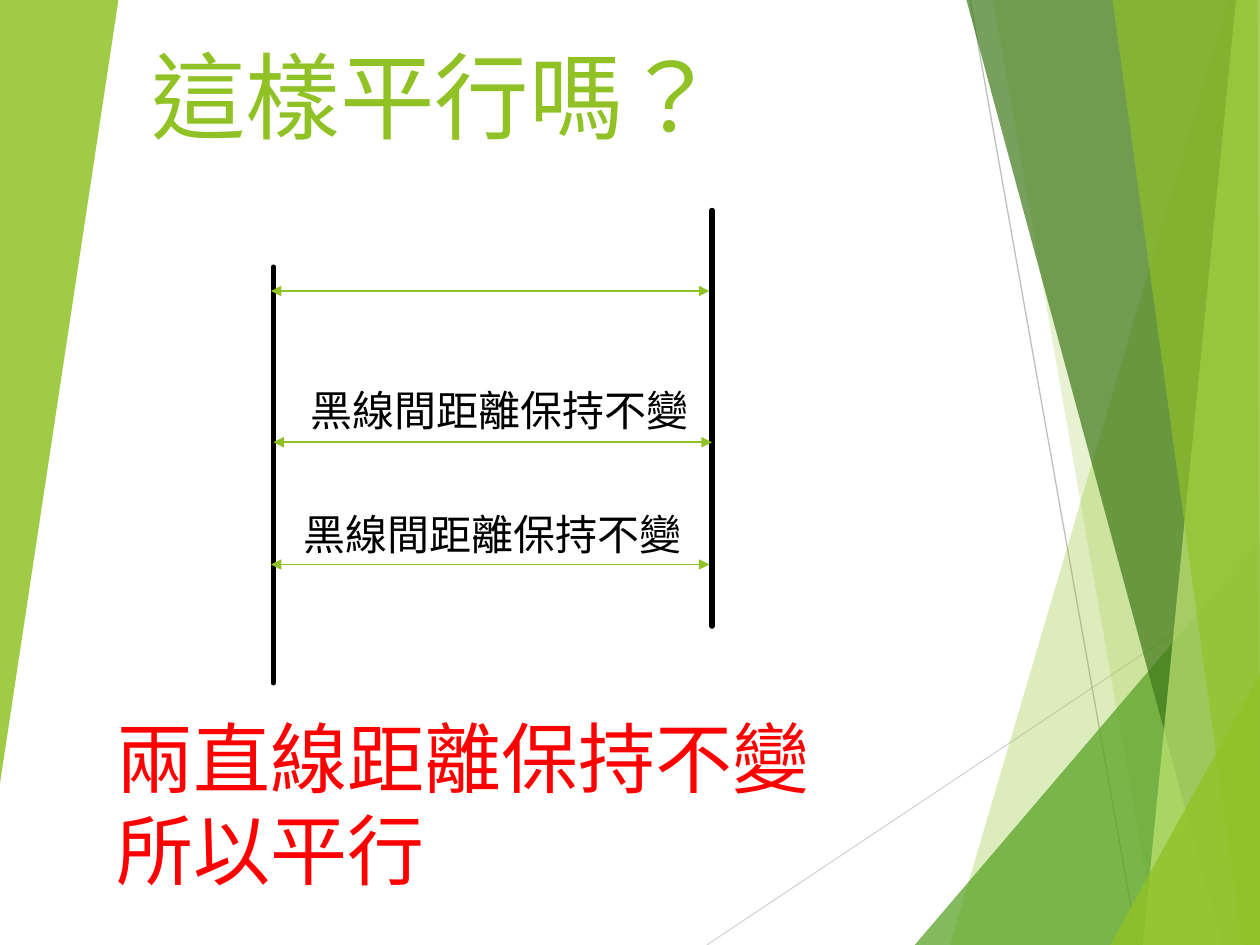
from lxml.etree import SubElement
from pptx import Presentation
from pptx.dml.color import RGBColor
from pptx.enum.shapes import MSO_CONNECTOR
from pptx.enum.text import MSO_ANCHOR, MSO_AUTO_SIZE, PP_ALIGN
from pptx.oxml.ns import qn
from pptx.util import Inches, Pt

COLUMNS, ROWS = 100, 75
LIME, GREEN, FOREST, PALE = "90C226", "54A021", "3F7819", "C0E474"
BLACK, RED = "000000", "FF0000"
SERIF, DISPLAY = "Times New Roman", "Karla"

GUIDES = [((56.1, 75), (100, 45.7), "D9D9D9"), ((77, 0), (90.3, 75), "BFBFBF")]
FACETS = [
    (LIME, 30, [(97.5, 0), (75.4, 75), (100, 75), (100, 0)]),
    (LIME, 20, [(78.8, 0), (91.9, 75), (100, 75), (100, 0)]),
    (GREEN, 72, [(72.6, 75), (100, 42.9), (100, 75)]),
    (FOREST, 70, [(76.7, 0), (97, 75), (100, 75), (100, 0)]),
    (PALE, 70, [(98.1, 0), (90.7, 75), (100, 75), (100, 0)]),
    (LIME, 65, [(88.3, 0), (98.6, 75), (100, 75), (99.8, 0)]),
    (LIME, 80, [(88.1, 75), (100, 53.5), (100, 75)]),
    (LIME, 85, [(0, 0), (9.4, 0), (0, 62.2)]),
]
RAILS = [(21.7, 21.2), (56.5, 16.7)]
RAIL_LENGTH, GAP = 33, 34.8
SPANS = [(21.5, 23.1), (21.7, 35.1), (21.5, 44.8)]
LABELS = [(23.7, 30), (23.1, 39.9)]


def color(value):
    """Turn a hex string into a colour."""
    return RGBColor.from_string(value)


class SlidePainter:
    """Holds the grid, the style and the current slide."""

    def __init__(self, deck):
        """Set the slide size and add a slide with a title."""
        deck.slide_width, deck.slide_height = Inches(10), Inches(7.5)
        self.column = deck.slide_width / COLUMNS
        self.row = deck.slide_height / ROWS
        self.page = deck.slides.add_slide(deck.slide_layouts[5])

    def point(self, column, row):
        """Convert a grid position to slide units."""
        return round(column * self.column), round(row * self.row)

    def line(self, start, end, shade, width, arrows=False, cap="flat"):
        """Draw a straight line, with arrowheads at both ends if asked."""
        connector = self.page.shapes.add_connector(
            MSO_CONNECTOR.STRAIGHT, *self.point(*start), *self.point(*end))
        connector.line.color.rgb = color(shade)
        connector.line.width = Pt(width)
        outline = connector._element.spPr.find(qn("a:ln"))
        outline.set("cap", cap)
        if arrows:
            for tag in ("a:headEnd", "a:tailEnd"):
                SubElement(outline, qn(tag), type="triangle")
        SubElement(connector._element.spPr, qn("a:effectLst"))

    def facet(self, shade, opacity, corners):
        """Draw a translucent polygon."""
        first, *others = [self.point(*corner) for corner in corners]
        builder = self.page.shapes.build_freeform(*first)
        builder.add_line_segments(others, close=True)
        shape = builder.convert_to_shape()
        shape.shadow.inherit = False
        shape.line.fill.background()
        shape.fill.solid()
        shape.fill.fore_color.rgb = color(shade)
        tint = shape._element.spPr.find(qn("a:solidFill"))[0]
        SubElement(tint, qn("a:alpha"), val=str(opacity * 1000))

    def fill_text(self, box, lines, size, shade, font, align=PP_ALIGN.LEFT):
        """Fill a box with one paragraph for each line."""
        frame = box.text_frame
        frame.word_wrap = True
        frame.auto_size = MSO_AUTO_SIZE.NONE
        for index, words in enumerate(lines):
            para = frame.add_paragraph() if index else frame.paragraphs[0]
            para.alignment = align
            span = para.add_run()
            span.text = words
            span.font.size = Pt(size)
            span.font.name = font
            span.font.color.rgb = color(shade)
            span._r.get_or_add_rPr().set("lang", "zh-TW")

    def title(self, place, extent, words):
        """Move and format the title placeholder."""
        box = self.page.shapes.title
        box.left, box.top = self.point(*place)
        box.width, box.height = self.point(*extent)
        box.text_frame.vertical_anchor = MSO_ANCHOR.BOTTOM
        self.fill_text(box, [words], 54, LIME, DISPLAY, PP_ALIGN.RIGHT)

    def text(self, place, extent, lines, size, shade):
        """Add a text box."""
        box = self.page.shapes.add_textbox(*self.point(*place), *self.point(*extent))
        self.fill_text(box, lines, size, shade, SERIF)


def main():
    """Build the slide and save it."""
    deck = Presentation()
    painter = SlidePainter(deck)
    for start, end, shade in GUIDES:
        painter.line(start, end, shade, 0.75)
    for facet in FACETS:
        painter.facet(*facet)
    painter.title((-11.4, -1.9), (69.4, 14.4), "這樣平行嗎？")
    painter.text((8.3, 55.9), (68.3, 15.8), ["兩直線距離保持不變", "所以平行"], 44, RED)
    for column, row in RAILS:
        painter.line((column, row), (column, row + RAIL_LENGTH), BLACK, 3, cap="rnd")
    for column, row in SPANS:
        painter.line((column, row), (column + GAP, row), LIME, 1, arrows=True)
    for place in LABELS:
        painter.text(place, (34.3, 5), ["黑線間距離保持不變"], 24, BLACK)
    deck.save("out.pptx")


if __name__ == "__main__":
    main()
